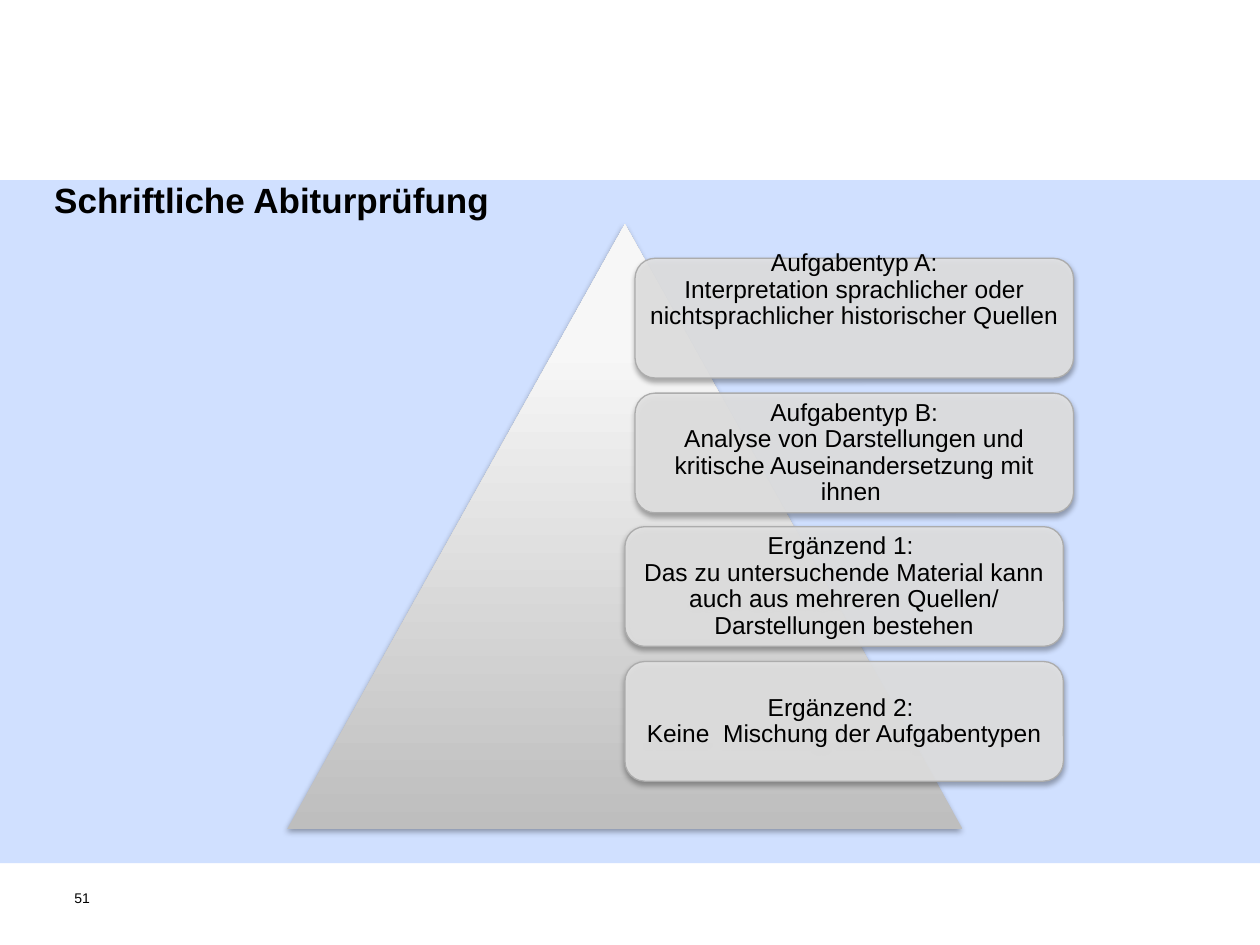
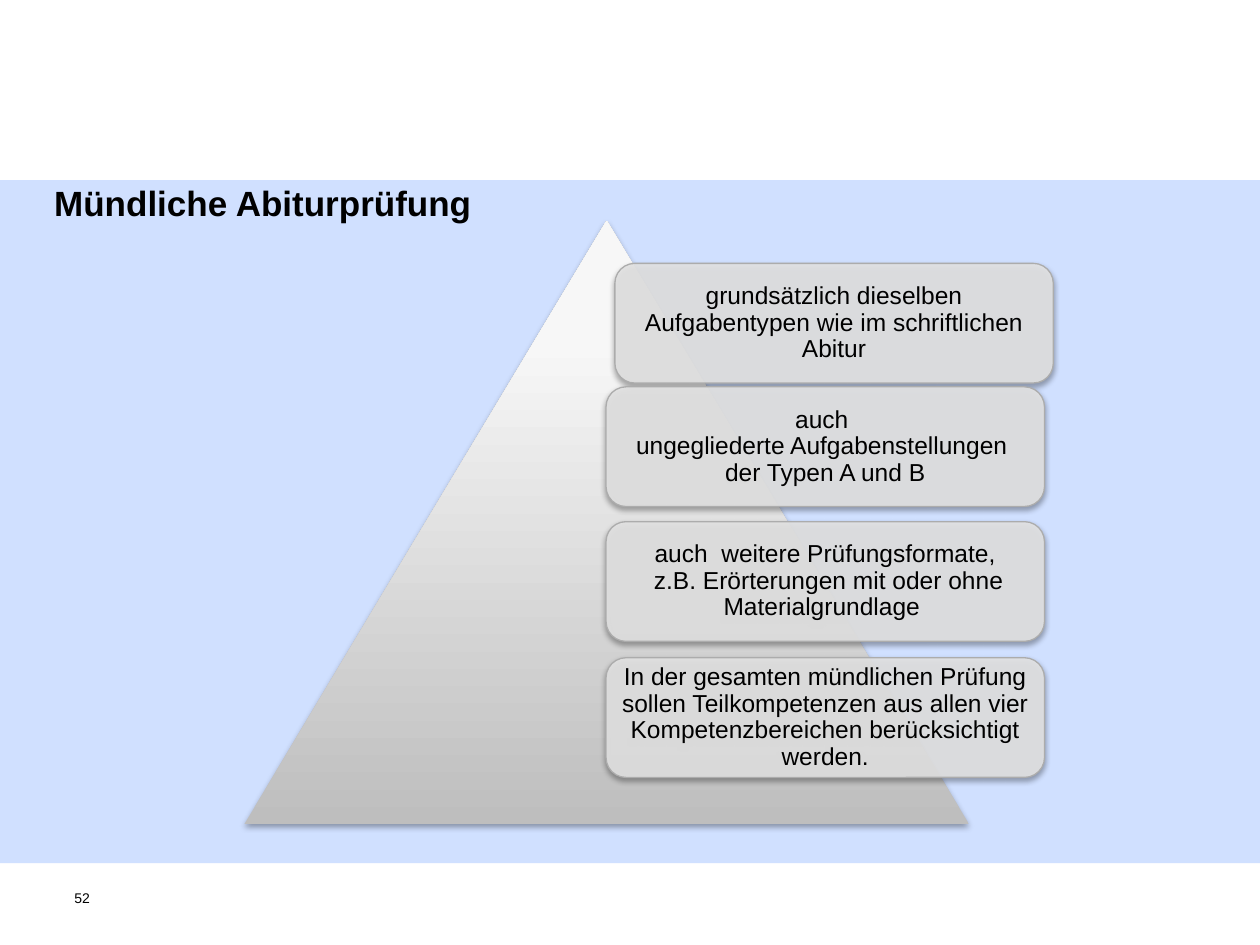
from copy import deepcopy

from lxml import etree
from pptx import Presentation
from pptx.dml.color import RGBColor
from pptx.enum.shapes import MSO_SHAPE
from pptx.enum.text import MSO_ANCHOR, MSO_AUTO_SIZE, PP_ALIGN
from pptx.oxml.ns import qn
from pptx.util import Inches, Pt

COLORS = {"text": "000000", "band": "6699FF", "card": "E3E3E3", "edge": "ACACAC"}
GRADIENT = [(0, "BEBEBE"), (0.8, "F7F7F7"), (1, "F8F8F8")]  # from the base to the tip
FONT = "Arial"
CARD_W, CARD_H, CARD_PITCH = 3.48, 0.95, 1.07
CARD_INSET = 0.06

# Per slide: number, title and its place, pyramid place, left and top of the card column,
# then the cards as (shift right, shift down, extra bottom inset, text)
SLIDES = [
    (51, "Schriftliche Abiturprüfung", (0.43, 1.42, 4.75, 0.46),
     (2.28, 1.78, 5.36, 4.8), (4.96, 2.05), [
         (0.08, 0, 0.44, "Aufgabentyp A:\nInterpretation sprachlicher oder "
                         "nichtsprachlicher historischer Quellen"),
         (0.08, 0, 0, "Aufgabentyp B:\nAnalyse von Darstellungen und "
                      "kritische Auseinandersetzung mit ihnen "),
         (0, -0.01, 0, "Ergänzend 1: \nDas zu untersuchende Material kann "
                       "auch aus mehreren Quellen/ Darstellungen bestehen"),
         (0, -0.01, 0, "Ergänzend 2: \nKeine  Mischung der Aufgabentypen"),
     ]),
    (52, "Mündliche Abiturprüfung", (0.43, 1.44, 3.96, 0.38),
     (1.94, 1.75, 5.75, 4.79), (4.81, 2.0), [
         (0.07, 0.09, 0, "grundsätzlich dieselben Aufgabentypen wie im "
                         "schriftlichen Abitur"),
         (0, 0, 0, "auch \nungegliederte Aufgabenstellungen \nder Typen A und B"),
         (0, 0, 0, "auch  weitere Prüfungsformate,\n z.B. Erörterungen mit oder ohne "
                   "Materialgrundlage "),
         (0, 0.01, 0, "In der gesamten mündlichen Prüfung sollen Teilkompetenzen aus "
                      "allen vier Kompetenzbereichen berücksichtigt werden."),
     ]),
]


def write(sp, text, size, bold=False, align=PP_ALIGN.LEFT, anchor=MSO_ANCHOR.TOP,
          inset=0, extra_bottom=0, spacing=1.0):
    tf = sp.text_frame
    tf.word_wrap = True
    tf.auto_size = MSO_AUTO_SIZE.NONE
    tf.vertical_anchor = anchor
    tf.margin_left = tf.margin_right = tf.margin_top = Inches(inset)
    tf.margin_bottom = Inches(inset + extra_bottom)
    p = tf.paragraphs[0]
    p.text = text.replace("\n", "\v")
    p.alignment = align
    p.line_spacing = spacing
    for r in p.runs:
        r.font.name, r.font.size, r.font.bold = FONT, Pt(size), bold
        r.font.color.rgb = RGBColor.from_string(COLORS["text"])


def paint(sp, color=None, alpha=100, shadow=True):
    """Fill with a see-through colour or the pyramid gradient, and add a soft shadow."""
    sp.line.fill.background()
    sp.shadow.inherit = False
    if color:
        sp.fill.solid()
        sp.fill.fore_color.rgb = RGBColor.from_string(color)
        rgb = sp.element.spPr.find(qn("a:solidFill"))[0]
        etree.SubElement(rgb, qn("a:alpha"), val=str(alpha * 1000))
    else:
        sp.fill.gradient()
        sp.fill.gradient_angle = 90
        stops = sp.element.spPr.find(qn("a:gradFill")).find(qn("a:gsLst"))
        stops.append(deepcopy(stops[-1]))
        for stop, (position, shade) in zip(sp.fill.gradient_stops, GRADIENT):
            stop.position = position
            stop.color.rgb = RGBColor.from_string(shade)
    if shadow:
        effects = sp.element.spPr.find(qn("a:effectLst"))
        outer = etree.SubElement(effects, qn("a:outerShdw"), blurRad=str(Pt(3.1)),
                                 dist=str(Pt(1.8)), dir="5400000", rotWithShape="0")
        rgb = etree.SubElement(outer, qn("a:srgbClr"), val="000000")
        etree.SubElement(rgb, qn("a:alpha"), val="35000")


prs = Presentation()
prs.slide_width, prs.slide_height = Inches(10), Inches(7.5)
layout = prs.slide_layouts[5]

for i, (number, title, title_box, pyramid_box, (left, top), cards) in enumerate(SLIDES):
    s = prs.slides.add_slide(layout)

    # Blue band, kept once on the shared layout
    if i == 0:
        band = s.shapes.add_shape(MSO_SHAPE.RECTANGLE, 0, Inches(1.43),
                                  prs.slide_width, Inches(5.42))
        paint(band, COLORS["band"], 30, shadow=False)
        layout.shapes[0].element.addprevious(band.element)

    # Title and slide number
    sp = s.shapes.title
    sp.left, sp.top, sp.width, sp.height = map(Inches, title_box)
    write(sp, title, 20, bold=True)
    sp = s.shapes.add_textbox(*map(Inches, (0.59, 7.06, 0.6, 0.37)))
    write(sp, str(number), 8)

    # Pyramid
    paint(s.shapes.add_shape(MSO_SHAPE.ISOSCELES_TRIANGLE, *map(Inches, pyramid_box)))

    # Cards
    for row, (dx, dy, extra_bottom, text) in enumerate(cards):
        sp = s.shapes.add_shape(MSO_SHAPE.ROUNDED_RECTANGLE, Inches(left + dx),
                                Inches(top + row * CARD_PITCH + dy),
                                Inches(CARD_W), Inches(CARD_H))
        paint(sp, COLORS["card"], 90)
        sp.line.color.rgb = RGBColor.from_string(COLORS["edge"])
        sp.line.width = Pt(0.75)
        write(sp, text, 14, align=PP_ALIGN.CENTER, anchor=MSO_ANCHOR.MIDDLE,
              inset=CARD_INSET, extra_bottom=extra_bottom, spacing=0.9)

prs.save("out.pptx")
